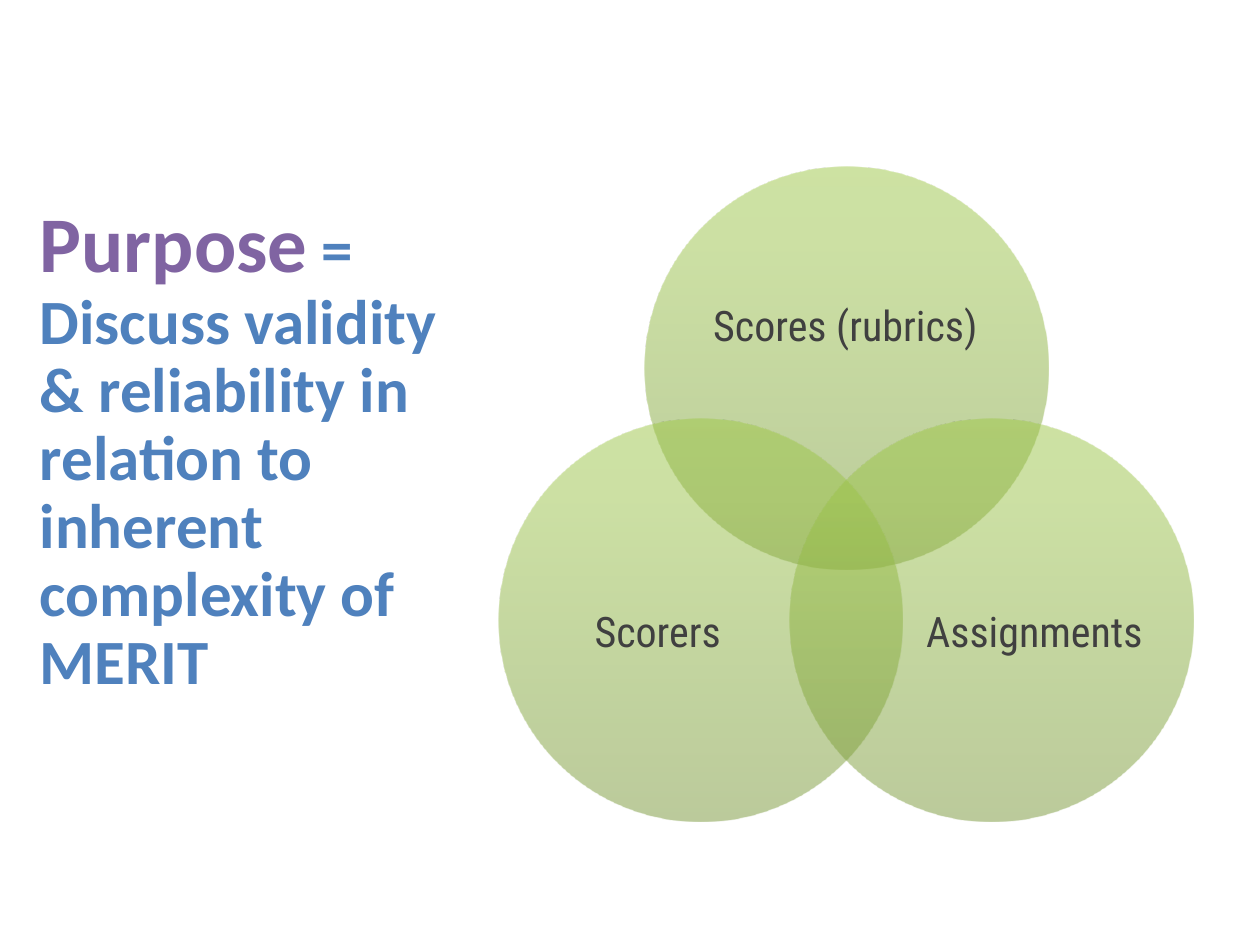
from pptx import Presentation
from pptx.dml.color import RGBColor
from pptx.enum import shapes, text
from pptx.oxml import parse_xml
from pptx.oxml.ns import nsdecls
from pptx.util import Pt

PURPLE = RGBColor(0x80, 0x64, 0xA2)
BLUE = RGBColor(0x4F, 0x81, 0xBD)
GREY = RGBColor(0x40, 0x40, 0x40)
GREENS = [(0, RGBColor(0x77, 0x97, 0x37)),
          (80, RGBColor(0x9B, 0xC3, 0x48)),
          (100, RGBColor(0x9D, 0xC7, 0x46))]
DIAMETER = 230.4


def add_span(para, words, **font_format):
    span = para.add_run()
    span.text = words
    span.font.color.rgb = font_format.pop("color")
    for name, value in font_format.items():
        setattr(span.font, name, value)


def fill_with_clear_gradient(shape):
    """Fill with half-transparent greens that run from the bottom up."""
    stops = "".join(
        f'<a:gs pos="{place * 1000}"><a:srgbClr val="{color}">'
        '<a:alpha val="50000"/></a:srgbClr></a:gs>'
        for place, color in GREENS)
    properties = shape._element.spPr
    properties.insert(2, parse_xml(
        f'<a:gradFill {nsdecls("a")} rotWithShape="1"><a:gsLst>{stops}</a:gsLst>'
        '<a:lin ang="16200000" scaled="0"/></a:gradFill>'))


deck = Presentation()
deck.slide_width, deck.slide_height = Pt(720), Pt(540)
page = deck.slides.add_slide(deck.slide_layouts[5])

title = page.shapes.title
title.left, title.top, title.width, title.height = Pt(17.5), Pt(91), Pt(247.7), Pt(311)
frame = title.text_frame
frame_format = {
    "word_wrap": True, "auto_size": text.MSO_AUTO_SIZE.NONE,
    "vertical_anchor": text.MSO_ANCHOR.BOTTOM,
    "margin_left": Pt(5.25), "margin_right": Pt(5.25),
    "margin_top": Pt(3), "margin_bottom": Pt(3),
}
for name, value in frame_format.items():
    setattr(frame, name, value)
para = frame.paragraphs[0]
para.alignment = text.PP_ALIGN.LEFT
para.line_spacing = 0.9
add_span(para, "Purpose", size=Pt(45), name="Calibri", bold=True, color=PURPLE)
add_span(para, " = Discuss validity & reliability in relation to inherent complexity of MERIT",
         size=Pt(36), name="Calibri", bold=True, color=BLUE)

# Label, circle corner, label box
venn = page.shapes.add_group_shape()
circles = [
    ("Scores (rubrics)", (368.6, 95), (398.9, 135.4, 168.5, 103.7)),
    ("Assignments", (451.4, 239), (522, 298.8, 138.2, 126.7)),
    ("Scorers", (285.1, 239), (306.7, 298.8, 138.2, 126.7)),
]
for label, (left, top), label_area in circles:
    circle = venn.shapes.add_shape(shapes.MSO_SHAPE.OVAL, Pt(left), Pt(top),
                                   Pt(DIAMETER), Pt(DIAMETER))
    circle.shadow.inherit = False
    circle.line.fill.background()
    fill_with_clear_gradient(circle)

    box = venn.shapes.add_textbox(*map(Pt, label_area))
    frame = box.text_frame
    frame.word_wrap = True
    frame.vertical_anchor = text.MSO_ANCHOR.MIDDLE
    for side in ("left", "right", "top", "bottom"):
        setattr(frame, f"margin_{side}", 0)
    para = frame.paragraphs[0]
    para.alignment = text.PP_ALIGN.CENTER
    para.line_spacing = 0.9
    add_span(para, label, size=Pt(24), name="Roboto Condensed", color=GREY)

deck.save("out.pptx")
